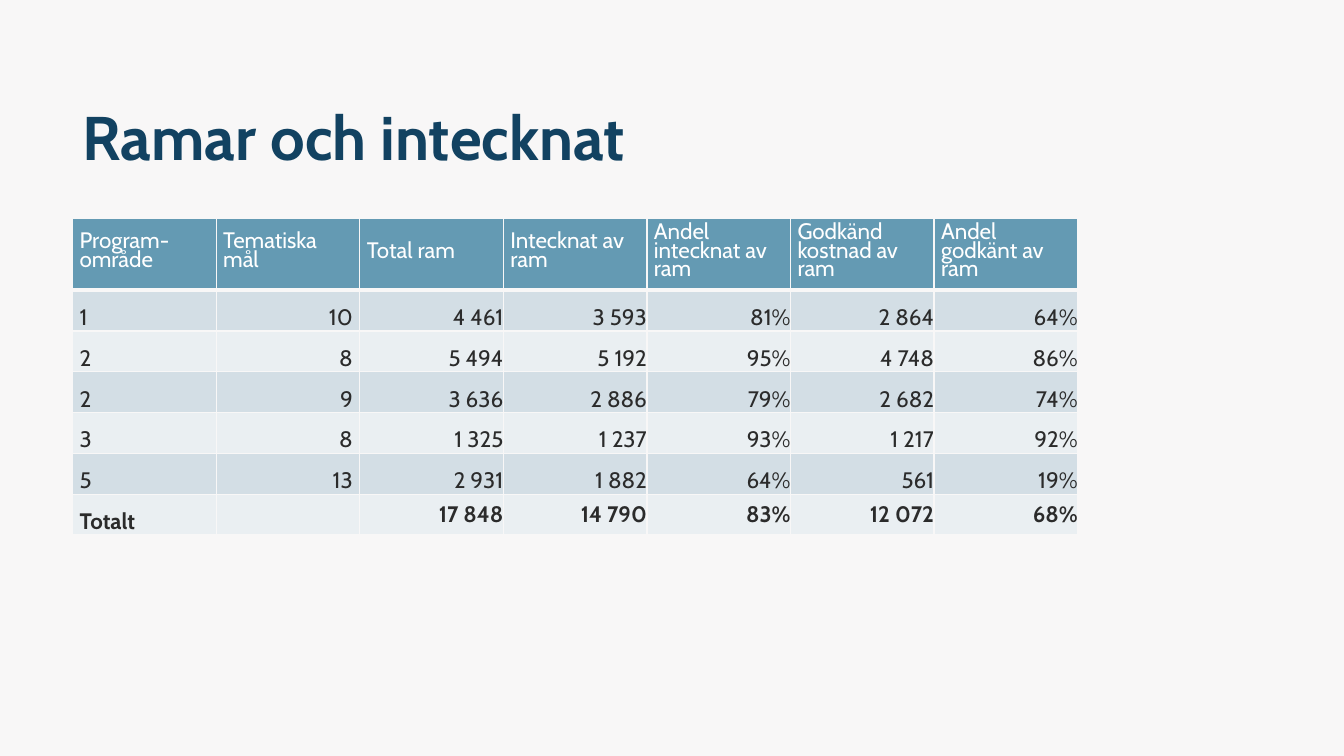
from lxml.etree import SubElement
from pptx import Presentation
from pptx.dml.color import RGBColor
from pptx.enum.text import MSO_ANCHOR, PP_ALIGN
from pptx.oxml.ns import qn
from pptx.util import Inches, Pt

BACKGROUND = "F8F7F7"
HEADER_FILL = "649AB3"
BAND_FILLS = ["D3DEE5", "EAEFF2"]
INK = "2B2B2B"
ROWS = [
    ["Program-område", "Tematiska mål", "Total ram", "Intecknat av ram",
     "Andel intecknat av ram", "Godkänd kostnad av ram", "Andel godkänt av ram"],
    ["1", "10", "4 461", "3 593", "81%", "2 864", "64%"],
    ["2", "8", "5 494", "5 192", "95%", "4 748", "86%"],
    ["2", "9", "3 636", "2 886", "79%", "2 682", "74%"],
    ["3", "8", "1 325", "1 237", "93%", "1 217", "92%"],
    ["5", "13", "2 931", "1 882", "64%", "561", "19%"],
    ["Totalt", "", "17 848", "14 790", "83%", "12 072", "68%"],
]


def rgb(value):
    return RGBColor.from_string(value)


def write(tf, text, size=16, color=INK, bold=False, align=PP_ALIGN.LEFT,
          spacing=None, after=0):
    tf.word_wrap = True
    p = tf.paragraphs[0]
    p.alignment = align
    p.space_after = Pt(after)
    if spacing:
        p.line_spacing = Pt(spacing)
    if text:
        r = p.add_run()
        r.text = text
        r.font.name = "Cabin"
        r.font.size = Pt(size)
        r.font.bold = bold
        r.font.color.rgb = rgb(color)


def set_borders(cell, color, **widths):
    tcPr = cell._tc.get_or_add_tcPr()
    for i, side in enumerate("LRTB"):
        ln = SubElement(tcPr, qn("a:ln" + side), w=str(Pt(widths.get(side, 1))))
        solid = SubElement(ln, qn("a:solidFill"))
        SubElement(solid, qn("a:srgbClr"), val=color)
        tcPr.insert(i, ln)


def add_title(s, text, left, top, width, height):
    tf = s.shapes.add_textbox(Inches(left), Inches(top), Inches(width), Inches(height)).text_frame
    tf.vertical_anchor = MSO_ANCHOR.MIDDLE
    write(tf, text, size=44, color="124261", bold=True)


def format_cell(cell, text, row, col):
    header, total = row == 0, row == len(ROWS) - 1
    label = header or col < 2
    cell.margin_left = cell.margin_right = Inches(0.07 if label else 0)
    cell.margin_top = cell.margin_bottom = 0
    centred = header or (total and not label)
    cell.vertical_anchor = MSO_ANCHOR.MIDDLE if centred else MSO_ANCHOR.BOTTOM
    cell.fill.solid()
    cell.fill.fore_color.rgb = rgb(HEADER_FILL if header else BAND_FILLS[(row - 1) % 2])
    set_borders(cell, BACKGROUND, T=3 if row == 1 else 1, B=3 if header else 1)
    write(cell.text_frame, text, color="FFFFFF" if header else INK, bold=total,
          align=PP_ALIGN.LEFT if header or col == 0 else PP_ALIGN.RIGHT,
          spacing=13 if label else None, after=2 if label else 0)


def add_budget_table(s, left, top, width, height, header_height=0.71):
    cols, body = len(ROWS[0]), len(ROWS) - 1
    table = s.shapes.add_table(len(ROWS), cols, Inches(left), Inches(top),
                               Inches(width), Inches(height)).table
    for column in table.columns:
        column.width = Inches(width / cols)
    for i, row in enumerate(table.rows):
        row.height = Inches((height - header_height) / body if i else header_height)
        for j, text in enumerate(ROWS[i]):
            format_cell(table.cell(i, j), text, i, j)


def main():
    prs = Presentation()
    prs.slide_width, prs.slide_height = Inches(13.33), Inches(7.5)
    s = prs.slides.add_slide(prs.slide_layouts[6])
    s.background.fill.solid()
    s.background.fill.fore_color.rgb = rgb(BACKGROUND)
    add_title(s, "Ramar och intecknat", 0.72, 0.62, 9.97, 1.45)
    add_budget_table(s, 0.72, 2.17, 9.97, 3.14)
    prs.save("out.pptx")


if __name__ == "__main__":
    main()
